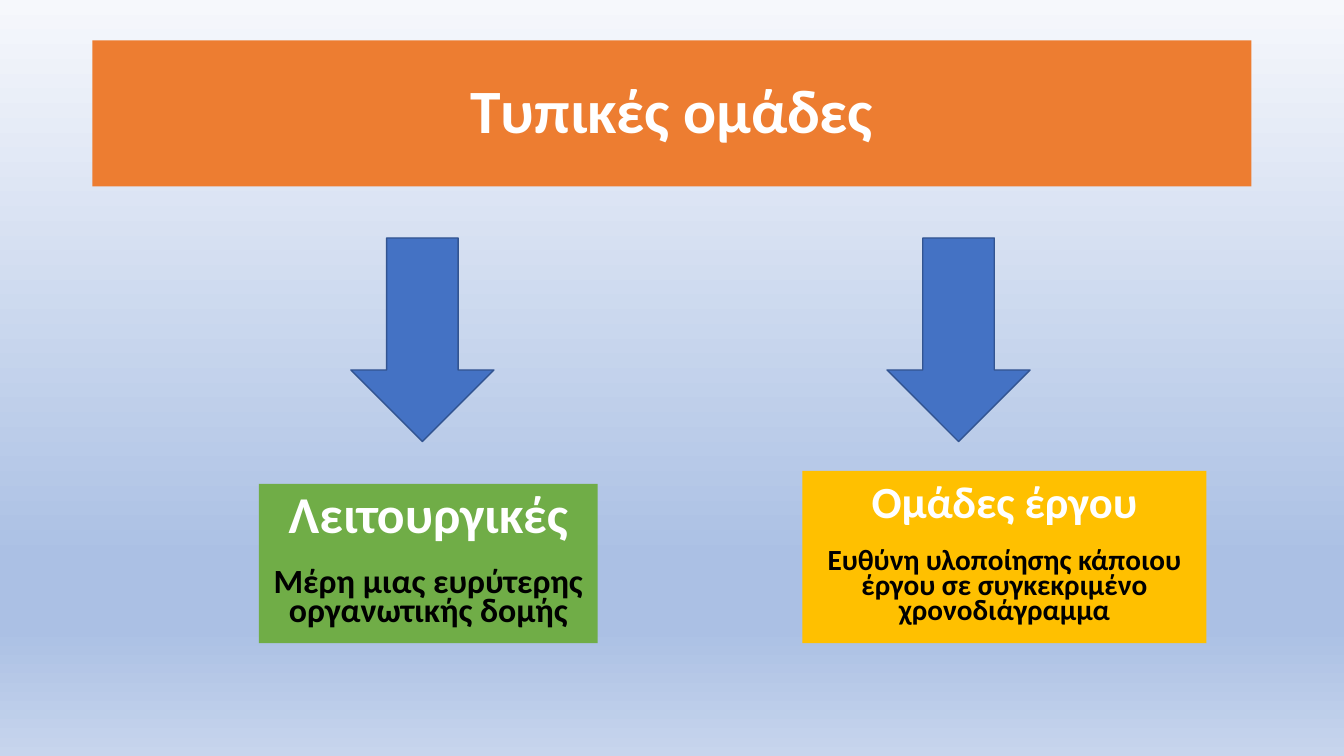
"""Build a slide that splits typical teams into two kinds."""
from pptx import Presentation
from pptx.dml.color import RGBColor
from pptx.enum.shapes import MSO_SHAPE
from pptx.enum.text import MSO_ANCHOR, PP_ALIGN
from pptx.oxml import parse_xml
from pptx.oxml.ns import nsdecls
from pptx.util import Pt

TITLE = "Τυπικές ομάδες"
TEAMS = [
    {"heading": "Λειτουργικές", "detail": "Μέρη μιας ευρύτερης οργανωτικής δομής",
     "fill": "green", "sizes": "large", "left": 185, "width": 242, "height": 113.8, "arrow_left": 250.6},
    {"heading": "Ομάδες έργου", "detail": "Ευθύνη υλοποίησης κάποιου έργου σε συγκεκριμένο χρονοδιάγραμμα",
     "fill": "gold", "sizes": "small", "left": 573.1, "width": 288.7, "height": 123.1, "arrow_left": 633.6},
]
THEME = {
    "font": "Calibri",
    "orange": "ED7D31", "blue": "4472C4", "navy": "325491", "green": "70AD47",
    "gold": "FFC000", "white": "FFFFFF", "black": "000000",
    "title": 44, "large": (36.9, 24.2), "small": (31.8, 20.9),
    "backdrop": [(0, "F6F8FC"), (74, "ABC0E4"), (83, "ABC0E4"), (100, "C7D5ED")],
}
PAGE_WIDTH, PAGE_HEIGHT = 960, 540
TITLE_TOP, TITLE_WIDTH, TITLE_HEIGHT = 28.8, 828, 104.4
ARROW_TOP, ARROW_WIDTH, ARROW_HEIGHT = 170, 102.2, 145.4
TEAM_BOTTOM = 459.4
TEAM_LINE = 0.7
BLANK_LINE = 1.22 * TEAM_LINE


def color(name):
    return RGBColor.from_string(THEME[name])


def paint_backdrop(page):
    stops = "".join(
        f'<a:gs pos="{percent * 1000}"><a:srgbClr val="{shade}"/></a:gs>'
        for percent, shade in THEME["backdrop"]
    )
    page.element.cSld.insert(0, parse_xml(
        f'<p:bg {nsdecls("p", "a")}><p:bgPr><a:gradFill rotWithShape="1">'
        f'<a:gsLst>{stops}</a:gsLst><a:lin ang="5400000" scaled="0"/>'
        '</a:gradFill><a:effectLst/></p:bgPr></p:bg>'
    ))


def add_box(page, kind, left, top, width, height, fill, line=None):
    box = page.shapes.add_shape(kind, Pt(left), Pt(top), Pt(width), Pt(height))
    box.shadow.inherit = False
    box.fill.solid()
    box.fill.fore_color.rgb = color(fill)
    if line:
        box.line.color.rgb = color(line)
        box.line.width = Pt(1)
    else:
        box.line.fill.background()
    box.text_frame.word_wrap = True
    box.text_frame.vertical_anchor = MSO_ANCHOR.MIDDLE
    return box


def write(para, text, *, size, ink="white", spacing=TEAM_LINE, before=0):
    para.alignment = PP_ALIGN.CENTER
    para.line_spacing = spacing
    para.space_before = Pt(before)
    span = para.add_run()
    span.text = text
    span.font.name = THEME["font"]
    span.font.size = Pt(size)
    span.font.bold = True
    span.font.color.rgb = color(ink)


def add_team(page, team):
    add_box(page, MSO_SHAPE.DOWN_ARROW, team["arrow_left"], ARROW_TOP,
            ARROW_WIDTH, ARROW_HEIGHT, "blue", "navy")
    box = add_box(page, MSO_SHAPE.RECTANGLE, team["left"], TEAM_BOTTOM - team["height"],
                  team["width"], team["height"], team["fill"])
    heading_size, detail_size = THEME[team["sizes"]]
    frame = box.text_frame
    write(frame.paragraphs[0], team["heading"], size=heading_size)
    write(frame.add_paragraph(), team["detail"], size=detail_size, ink="black",
          before=detail_size * BLANK_LINE)


def main():
    deck = Presentation()
    deck.slide_width, deck.slide_height = Pt(PAGE_WIDTH), Pt(PAGE_HEIGHT)
    page = deck.slides.add_slide(deck.slide_layouts[6])
    paint_backdrop(page)
    banner = add_box(page, MSO_SHAPE.RECTANGLE, (PAGE_WIDTH - TITLE_WIDTH) / 2, TITLE_TOP,
                     TITLE_WIDTH, TITLE_HEIGHT, "orange")
    write(banner.text_frame.paragraphs[0], TITLE, size=THEME["title"], spacing=0.9)
    for team in TEAMS:
        add_team(page, team)
    deck.save("out.pptx")


if __name__ == "__main__":
    main()
